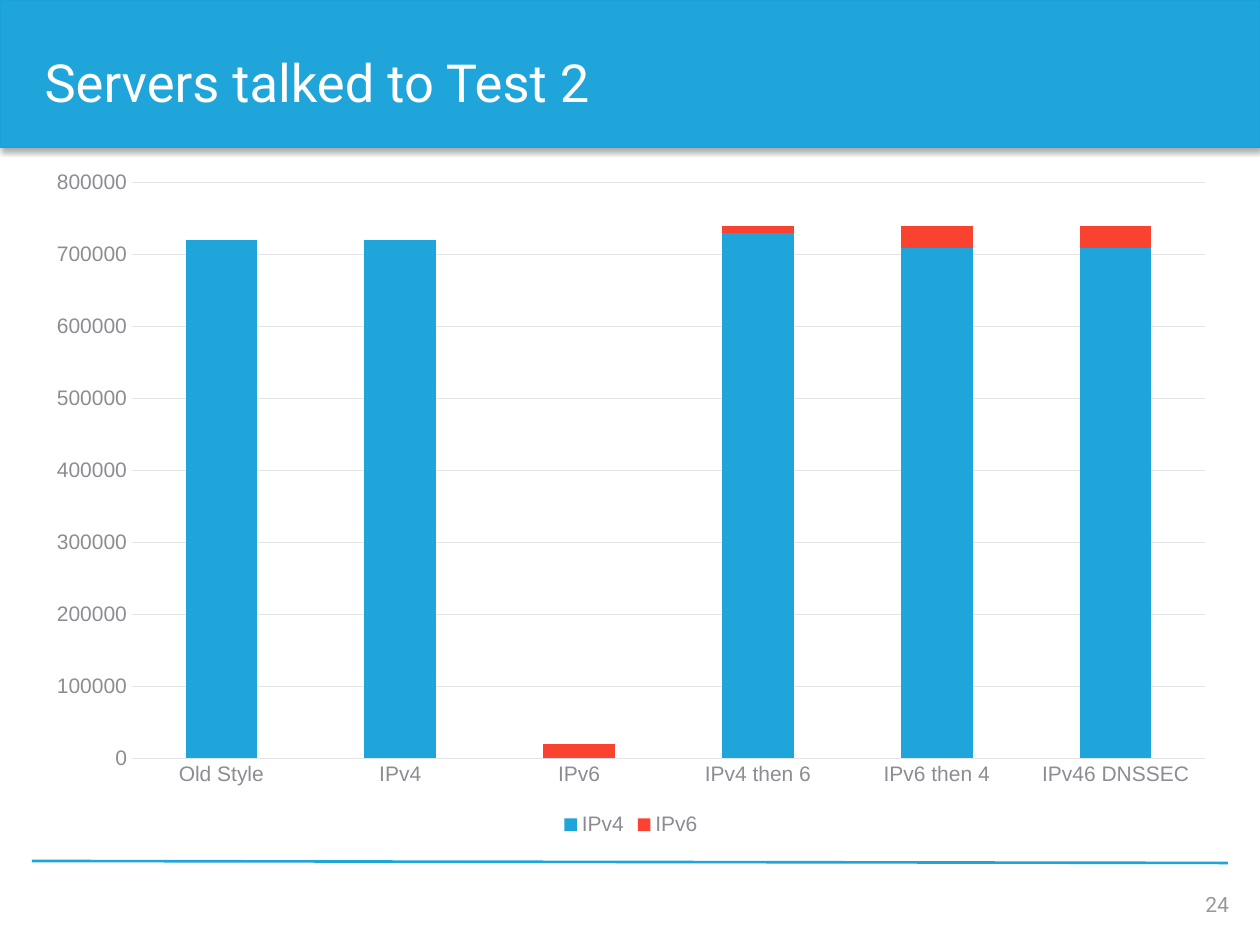
from lxml import etree
from pptx import Presentation
from pptx.chart.data import CategoryChartData
from pptx.dml.color import RGBColor
from pptx.enum.chart import XL_CHART_TYPE as ChartType, XL_LEGEND_POSITION as LegendPos, XL_TICK_MARK as Tick
from pptx.enum.shapes import MSO_CONNECTOR as Connector, MSO_SHAPE as Shape
from pptx.enum.text import MSO_ANCHOR as Anchor, MSO_AUTO_SIZE as AutoSize, PP_ALIGN as Align
from pptx.oxml import parse_xml
from pptx.oxml.ns import nsdecls, qn
from pptx.util import Emu, Pt

BLUE, RED, GRID, LABEL = "1FA5DA", "F94330", "E5E4E6", "8D8C94"


def px(*lengths):
    return [Emu(round(length * 914400 / 126)) for length in lengths]


def color(hex_text):
    return RGBColor.from_string(hex_text)


deck = Presentation()
deck.slide_width, deck.slide_height = px(1260, 945)
page = deck.slides.add_slide(deck.slide_layouts[5])
shapes = page.shapes
title = shapes.title

# Header band with a soft shadow below it
band = shapes.add_shape(Shape.RECTANGLE, *px(0, 0, 1260, 147))
band.fill.solid()
band.fill.fore_color.rgb = color(BLUE)
band.line.color.rgb = color("1AA3DA")
band.line.width = Pt(0.75)
band._element.spPr.append(parse_xml(
    f'<a:effectLst {nsdecls("a")}>'
    f'<a:outerShdw blurRad="{Pt(3.1)}" dist="{Pt(1.8)}" dir="5400000" rotWithShape="0">'
    '<a:srgbClr val="000000"><a:alpha val="35000"/></a:srgbClr>'
    '</a:outerShdw></a:effectLst>'))

# Title, brought in front of the band
band._element.addnext(title._element)
title.left, title.top, title.width, title.height = px(32, 33, 1198, 105)
frame = title.text_frame
frame.text = "Servers talked to Test 2"
frame.vertical_anchor = Anchor.MIDDLE
frame.auto_size = AutoSize.NONE
para = frame.paragraphs[0]
para.alignment = Align.LEFT
para.line_spacing = 0.9
para.font.name, para.font.size = "Roboto", Pt(30)
para.font.color.rgb = color("FFFFFF")

# Footer rule
rule = shapes.add_connector(Connector.STRAIGHT, *px(32, 861, 1228, 863))
rule.line.color.rgb = color(BLUE)
rule.line.width = Pt(1.5)
etree.SubElement(rule._element.spPr, qn("a:effectLst"))

# Stacked column chart
data = CategoryChartData()
data.categories = ["Old Style", "IPv4", "IPv6", "IPv4 then 6", "IPv6 then 4", "IPv46 DNSSEC"]
data.add_series("IPv4", [720000, 720000, 0, 730000, 710000, 710000])
data.add_series("IPv6", [0, 0, 20000, 10000, 30000, 30000])
chart = shapes.add_chart(ChartType.COLUMN_STACKED, *px(33, 158, 1196, 683), data).chart
chart.has_title = False
chart.has_legend = True
chart.legend.position = LegendPos.BOTTOM
chart.legend.include_in_layout = False
chart.font.name, chart.font.size = "Arial", Pt(12)
chart.font.color.rgb = color(LABEL)

plot = chart.plots[0]
plot.gap_width, plot.overlap = 150, 100
plot.vary_by_categories = False
for series, fill in zip(plot.series, (BLUE, RED)):
    series.format.fill.solid()
    series.format.fill.fore_color.rgb = color(fill)

values, categories = chart.value_axis, chart.category_axis
values.minimum_scale, values.maximum_scale, values.major_unit = 0, 800000, 100000
values.tick_labels.number_format = "General"
values.tick_labels.number_format_is_linked = False
values.format.line.fill.background()
for axis in (values, categories):
    axis.major_tick_mark = axis.minor_tick_mark = Tick.NONE
for line in (values.major_gridlines.format.line, categories.format.line):
    line.color.rgb = color(GRID)
    line.width = Pt(0.75)

# Page number
number = shapes.add_textbox(*px(935, 863, 294, 50)).text_frame
number.word_wrap = True
number.vertical_anchor = Anchor.MIDDLE
number.margin_left, number.margin_top, number.margin_right, number.margin_bottom = px(0, 32, 0, 0)
number.text = "24"
para = number.paragraphs[0]
para.alignment = Align.RIGHT
para.font.name, para.font.size = "Roboto", Pt(12)
para.font.color.rgb = color("98989A")

deck.save("out.pptx")
